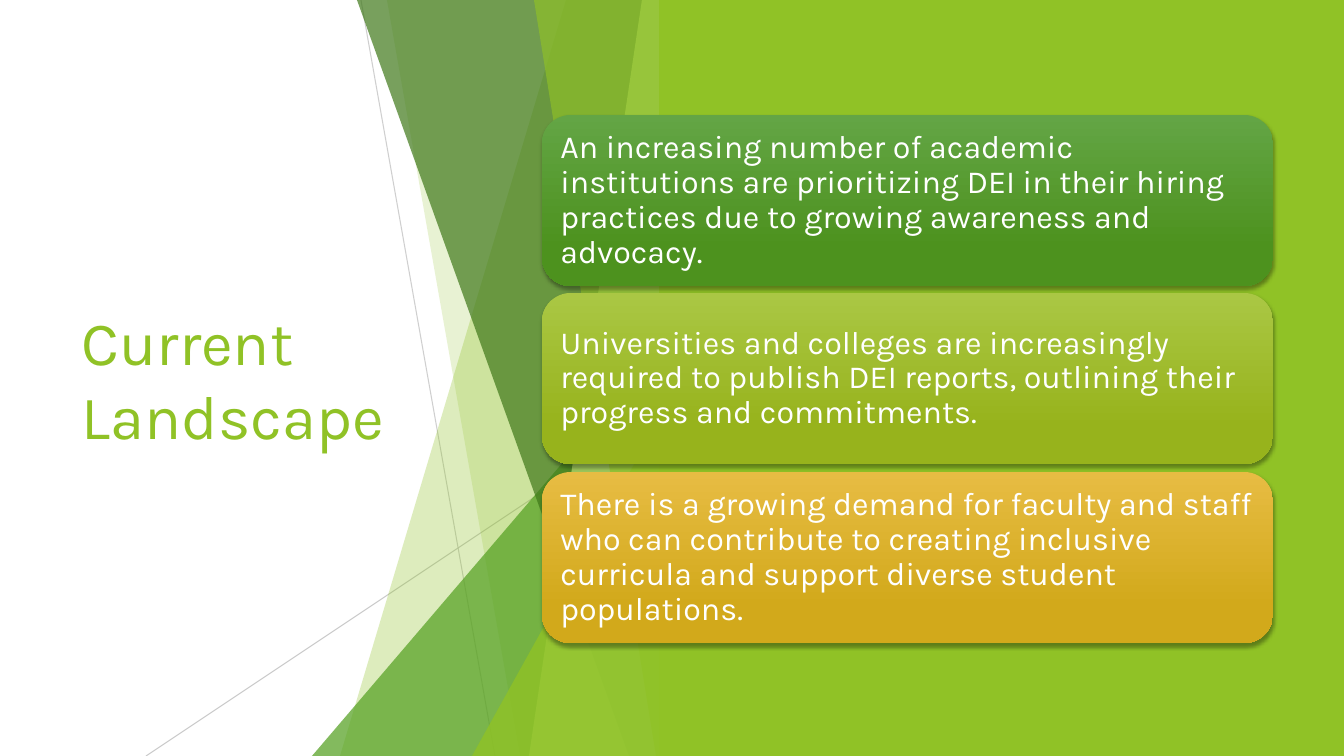
import dataclasses

import lxml.etree
import pptx
import pptx.dml.color
import pptx.enum.shapes
import pptx.enum.text
import pptx.oxml.ns
import pptx.util

SLIDE_WIDTH, SLIDE_HEIGHT = 1344, 756
EMU_PER_PX = 12192000 / SLIDE_WIDTH
SHAPE = pptx.enum.shapes.MSO_SHAPE


@dataclasses.dataclass(frozen=True)
class Theme:
    font: str = "Karla"
    title_size: int = 44
    card_size: int = 23
    lime: str = "90C226"
    pale_lime: str = "C0E474"
    green: str = "54A021"
    forest: str = "3F7819"
    hairline: str = "BFBFBF"
    white: str = "FFFFFF"
    shadow: str = "000000"
    card_gradients: tuple = (
        ("63A545", "4D921E"),
        ("AAC744", "97B31C"),
        ("E7BC43", "D2A91B"),
    )


THEME = Theme()

CARD_TEXTS = (
    "An increasing number of academic institutions are prioritizing DEI in their "
    "hiring practices due to growing awareness and advocacy.",
    "Universities and colleges are increasingly required to publish DEI reports, "
    "outlining their progress and commitments.",
    "There is a growing demand for faculty and staff who can contribute to creating "
    "inclusive curricula and support diverse student populations.",
)


def px(length):
    return pptx.util.Emu(round(length * EMU_PER_PX))


def rgb(color):
    return pptx.dml.color.RGBColor.from_string(color)


def add_element(parent, tag, **attributes):
    element = lxml.etree.SubElement(parent, pptx.oxml.ns.qn(tag))
    for name, value in attributes.items():
        element.set(name, str(value))
    return element


def set_opacity(owner, percent):
    color = next(owner.iter(pptx.oxml.ns.qn("a:srgbClr")))
    add_element(color, "a:alpha", val=percent * 1000)


def paint(shape, color, opacity=100):
    shape.shadow.inherit = False
    shape.line.fill.background()
    shape.fill.solid()
    shape.fill.fore_color.rgb = rgb(color)
    if opacity < 100:
        set_opacity(shape.element.spPr, opacity)


def add_hairline(page, start, end, opacity):
    line = page.shapes.add_connector(
        pptx.enum.shapes.MSO_CONNECTOR.STRAIGHT, *map(px, start + end)
    )
    line.line.color.rgb = rgb(THEME.hairline)
    line.line.width = pptx.util.Pt(0.75)
    set_opacity(line.element.spPr, opacity)
    add_element(line.element.spPr, "a:effectLst")


def add_facet(page, top_left, bottom_left, right, color, opacity):
    builder = page.shapes.build_freeform(top_left, 0, scale=EMU_PER_PX)
    builder.add_line_segments(
        [(right, 0), (right, SLIDE_HEIGHT), (bottom_left, SLIDE_HEIGHT)], close=True
    )
    paint(builder.convert_to_shape(), color, opacity)


def add_triangle(page, left, top, width, color, opacity):
    triangle = page.shapes.add_shape(
        SHAPE.ISOSCELES_TRIANGLE, px(left), px(top), px(width), px(SLIDE_HEIGHT - top)
    )
    triangle.adjustments[0] = 1
    paint(triangle, color, opacity)


def add_panel(page, left):
    panel = page.shapes.add_shape(
        SHAPE.RECTANGLE, px(left), 0, px(SLIDE_WIDTH - left), px(SLIDE_HEIGHT)
    )
    paint(panel, THEME.lime)


def write_text(frame, text, size, color):
    frame.word_wrap = True
    frame.vertical_anchor = pptx.enum.text.MSO_ANCHOR.MIDDLE
    para = frame.paragraphs[0]
    para.text = text
    para.alignment = pptx.enum.text.PP_ALIGN.LEFT
    para.font.name = THEME.font
    para.font.size = pptx.util.Pt(size)
    para.font.color.rgb = rgb(color)
    return para


def add_title(page, text):
    box = page.shapes.add_textbox(px(72), px(152), px(391), px(452))
    write_text(box.text_frame, text, THEME.title_size, THEME.lime)


def add_card_shadow(card):
    card.shadow.inherit = False
    effects = card.element.spPr.find(pptx.oxml.ns.qn("a:effectLst"))
    shadow = add_element(
        effects,
        "a:outerShdw",
        blurRad=pptx.util.Pt(3),
        dist=pptx.util.Pt(2),
        dir=5400000,
        rotWithShape=0,
    )
    add_element(shadow, "a:srgbClr", val=THEME.shadow)
    set_opacity(shadow, 35)


def add_card(page, top, text, gradient):
    card = page.shapes.add_shape(
        SHAPE.ROUNDED_RECTANGLE, px(542), px(top), px(731), px(171)
    )
    card.line.fill.background()
    card.fill.gradient()
    card.fill.gradient_angle = 270
    for stop, color, position in zip(card.fill.gradient_stops, gradient, (0, 0.78)):
        stop.color.rgb = rgb(color)
        stop.position = position
    add_card_shadow(card)
    frame = card.text_frame
    frame.margin_left = frame.margin_right = px(10)
    frame.margin_top = frame.margin_bottom = px(10)
    para = write_text(frame, text, THEME.card_size, THEME.white)
    para.line_spacing = 0.9


def add_facets(page):
    add_hairline(page, (361, 0), (495, 756), 75)
    add_hairline(page, (671, 406), (146, 756), 80)
    add_facet(page, 566, 340, 671, THEME.lime, 30)
    add_facet(page, 387, 520, 672, THEME.lime, 20)
    add_triangle(page, 312, 336, 359, THEME.green, 72)
    add_facet(page, 357, 629, 671, THEME.forest, 70)
    add_facet(page, 642, 529, 671, THEME.pale_lime, 70)
    add_facet(page, 534, 656, 671, THEME.lime, 65)
    add_triangle(page, 472, 396, 200, THEME.lime, 80)


def main():
    deck = pptx.Presentation()
    deck.slide_width, deck.slide_height = px(SLIDE_WIDTH), px(SLIDE_HEIGHT)
    page = deck.slides.add_slide(deck.slide_layouts[6])
    add_title(page, "Current Landscape")
    add_facets(page)
    add_panel(page, 659)
    for index, (text, gradient) in enumerate(zip(CARD_TEXTS, THEME.card_gradients)):
        add_card(page, 115 + index * 357 // 2, text, gradient)
    deck.save("out.pptx")


if __name__ == "__main__":
    main()
